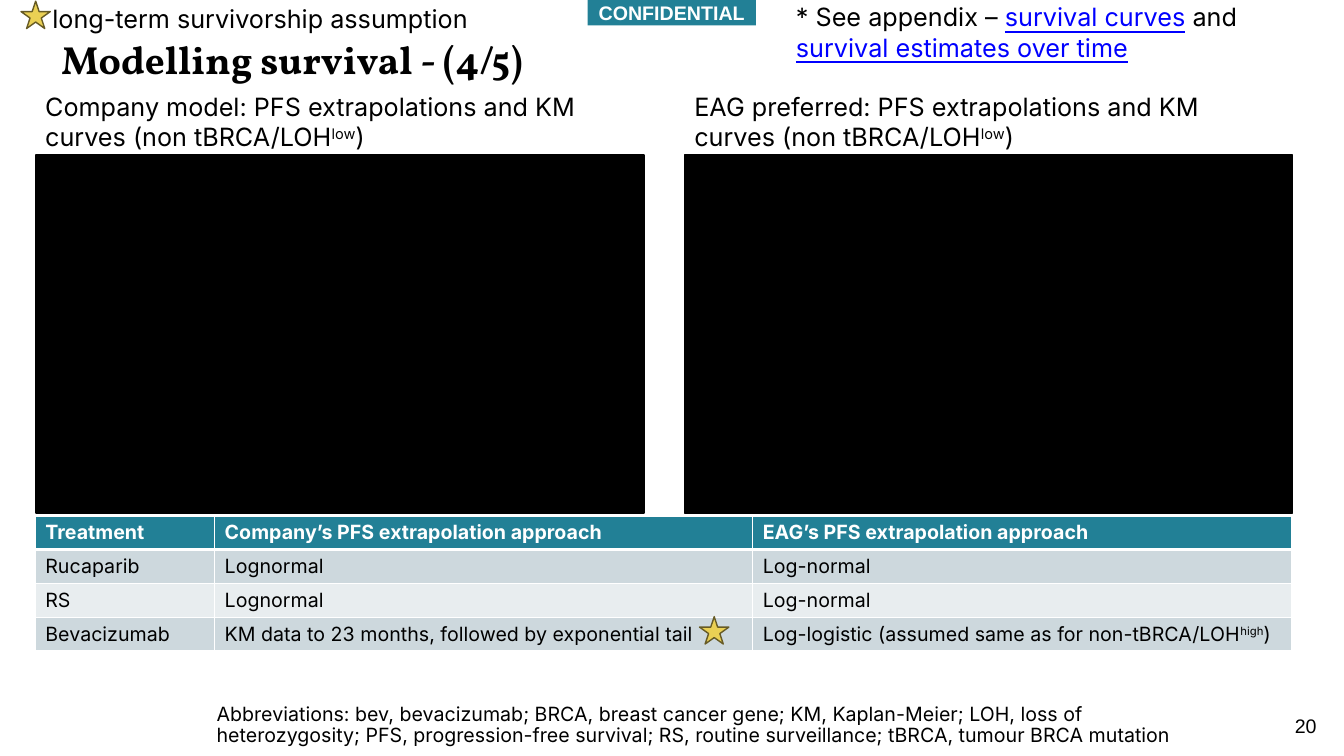
from lxml.etree import SubElement
from pptx import Presentation
from pptx.dml.color import RGBColor
from pptx.enum.shapes import MSO_SHAPE
from pptx.enum.text import MSO_ANCHOR, PP_ALIGN
from pptx.oxml.ns import qn
from pptx.util import Cm, Pt

THEME = {
    "teal": "228096", "band_dark": "CDD8DD", "band_light": "E8EDEF",
    "gold": "EAD054", "gold_line": "675B25", "link": "0000FF",
    "black": "000000", "white": "FFFFFF",
    "body": "Inter", "heading": "Vollkorn", "label": "Arial",
    "title_size": 28, "text_size": 18, "small_size": 14,
}

TITLE = "Modelling survival - (4/5)"
BADGE = "CONFIDENTIAL"
STAR_MEANING = "long-term survivorship assumption"
SLIDE_NUMBER = "20"
# Styled text is a list of (text, style) runs.
APPENDIX = [("* See appendix – ", ""), ("survival curves", "link"),
            (" and ", ""), ("survival estimates over time", "link")]
PANELS = [  # heading, left of heading, width of heading, left of panel
    ("Company model", 0.89, 15.34, 0.91),
    ("EAG preferred", 17.25, 14.25, 17.25),
]
PANEL_HEADING = ": PFS extrapolations and KM curves (non tBRCA/LOH"
APPROACHES = [
    ["Treatment", "Company’s PFS extrapolation approach",
     "EAG’s PFS extrapolation approach"],
    ["Rucaparib", "Lognormal", "Log-normal"],
    ["RS", "Lognormal", "Log-normal"],
    ["Bevacizumab", "KM data to 23 months, followed by exponential tail",
     [("Log-logistic (assumed same as for non-tBRCA/LOH", ""),
      ("high", "super"), (")", "")]],
]
ABBREVIATIONS = (
    "Abbreviations: bev, bevacizumab; BRCA, breast cancer gene; "
    "KM, Kaplan-Meier; LOH, loss of heterozygosity; PFS, progression-free "
    "survival; RS, routine surveillance; tBRCA, tumour BRCA mutation"
)

COLUMN_WIDTHS = [4.52, 13.56, 13.59]
ROW_HEIGHT = 0.85
STARS = [(17.63, 15.54), (0.53, 0.03)]
STAR_SIZE = (0.74, 0.69)
PANEL_TOP, PANEL_SIZE = 3.91, (15.32, 9.02)


def color(name):
    return RGBColor.from_string(THEME[name])


def write(frame, content, size="text_size", font="body", ink="black",
          bold=False, **paragraph_format):
    paragraph = frame.paragraphs[0]
    for name, value in paragraph_format.items():
        setattr(paragraph, name, value)
    runs = [(content, "")] if isinstance(content, str) else content
    for text, style in runs:
        run = paragraph.add_run()
        run.text = text
        values = {"name": THEME[font], "size": Pt(THEME[size]), "bold": bold,
                  "underline": style == "link"}
        for name, value in values.items():
            setattr(run.font, name, value)
        run.font.color.rgb = color("link" if style == "link" else ink)
        if style == "super":
            run._r.get_or_add_rPr().set("baseline", "30000")


def add_text(slide, box, content, anchor=MSO_ANCHOR.TOP, **format_values):
    frame = slide.shapes.add_textbox(*map(Cm, box)).text_frame
    frame.word_wrap = True
    frame.vertical_anchor = anchor
    write(frame, content, **format_values)


def add_block(slide, kind, box, fill, line=None):
    shape = slide.shapes.add_shape(kind, *map(Cm, box))
    shape.shadow.inherit = False
    shape.fill.solid()
    shape.fill.fore_color.rgb = color(fill)
    if line:
        shape.line.color.rgb = color(line)
        shape.line.width = Pt(1)
    else:
        shape.line.fill.background()
    return shape


def add_borders(cell, bottom_width):
    """Draw white lines on all sides; call before the cell is filled."""
    properties = cell._tc.get_or_add_tcPr()
    widths = {"a:lnL": 1, "a:lnR": 1, "a:lnT": 1, "a:lnB": bottom_width}
    for tag, width in widths.items():
        line = SubElement(properties, qn(tag), w=str(Pt(width)))
        fill = SubElement(line, qn("a:solidFill"))
        SubElement(fill, qn("a:srgbClr"), val=THEME["white"])


def add_approaches(slide):
    box = (0.89, 13, sum(COLUMN_WIDTHS), ROW_HEIGHT * len(APPROACHES))
    table = slide.shapes.add_table(
        len(APPROACHES), len(COLUMN_WIDTHS), *map(Cm, box)).table
    for column, width in zip(table.columns, COLUMN_WIDTHS):
        column.width = Cm(width)
    for row_index, row in enumerate(APPROACHES):
        header = row_index == 0
        band = "band_dark" if row_index % 2 else "band_light"
        for column_index, content in enumerate(row):
            cell = table.cell(row_index, column_index)
            add_borders(cell, 3 if header else 1)
            cell.fill.solid()
            cell.fill.fore_color.rgb = color("teal" if header else band)
            write(cell.text_frame, content, size="small_size", bold=header,
                  ink="white" if header else "black")


def main():
    presentation = Presentation()
    presentation.slide_width, presentation.slide_height = Cm(33.87), Cm(19.05)
    slide = presentation.slides.add_slide(presentation.slide_layouts[6])

    add_text(slide, (32.13, 17.78, 1.3, 1.02), SLIDE_NUMBER,
             anchor=MSO_ANCHOR.MIDDLE, size="small_size", font="label",
             alignment=PP_ALIGN.RIGHT)
    add_approaches(slide)
    add_text(slide, (1.3, 0.74, 31.24, 1.65), TITLE, anchor=MSO_ANCHOR.MIDDLE,
             size="title_size", font="heading", bold=True, line_spacing=0.9)

    badge = add_block(slide, MSO_SHAPE.RECTANGLE, (14.81, 0, 4.24, 0.64), "teal")
    badge.text_frame.vertical_anchor = MSO_ANCHOR.MIDDLE
    write(badge.text_frame, BADGE, size="small_size", font="label",
          ink="white", bold=True, alignment=PP_ALIGN.CENTER)

    add_text(slide, (5.21, 17.63, 25.25, 1.02), ABBREVIATIONS,
             size="small_size", line_spacing=0.9)
    for position in STARS:
        add_block(slide, MSO_SHAPE.STAR_5_POINT, position + STAR_SIZE,
                  "gold", "gold_line")
    add_text(slide, (1.07, -0.05, 11.13, 1.02), STAR_MEANING)
    add_text(slide, (19.81, -0.08, 11.99, 1.8), APPENDIX)

    for name, heading_left, heading_width, panel_left in PANELS:
        add_text(slide, (heading_left, 2.18, heading_width, 1.8),
                 [(name + PANEL_HEADING, ""), ("low", "super"), (")", "")])
        add_block(slide, MSO_SHAPE.RECTANGLE,
                  (panel_left, PANEL_TOP) + PANEL_SIZE, "black", "black")

    presentation.save("out.pptx")


if __name__ == "__main__":
    main()
